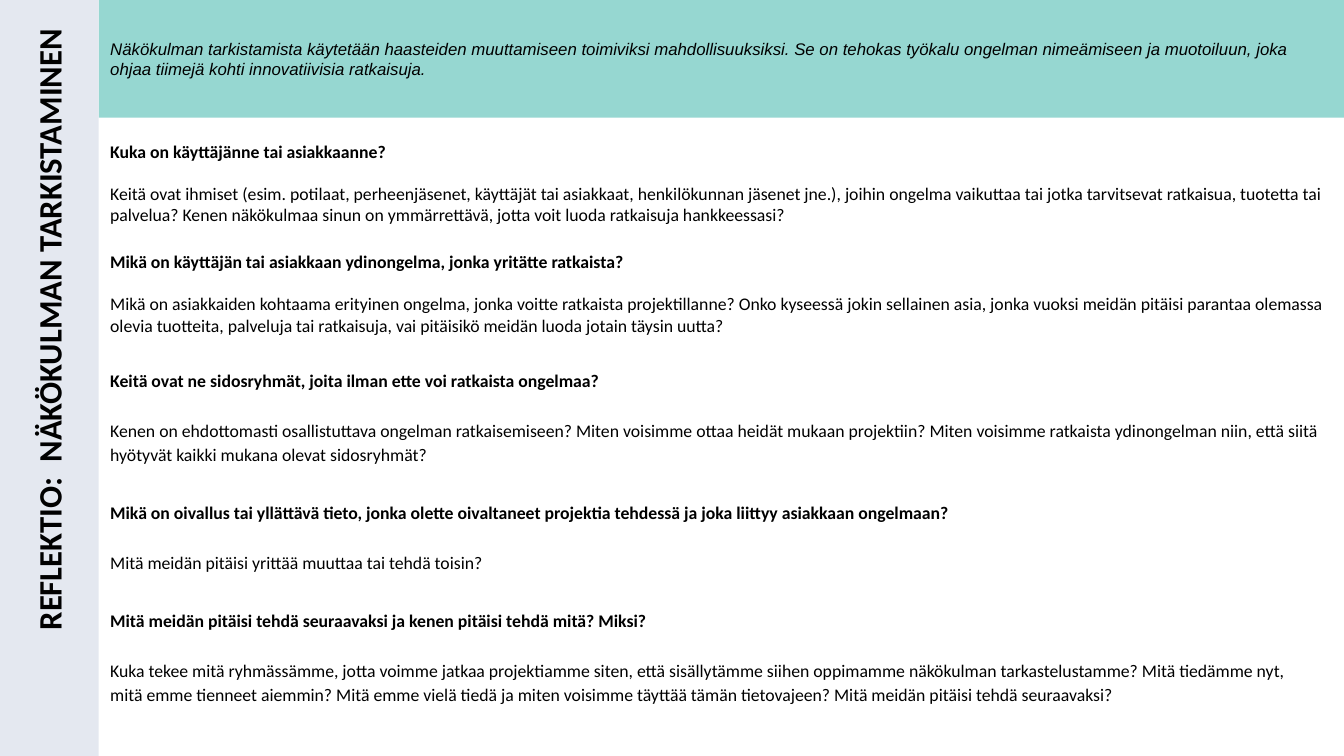
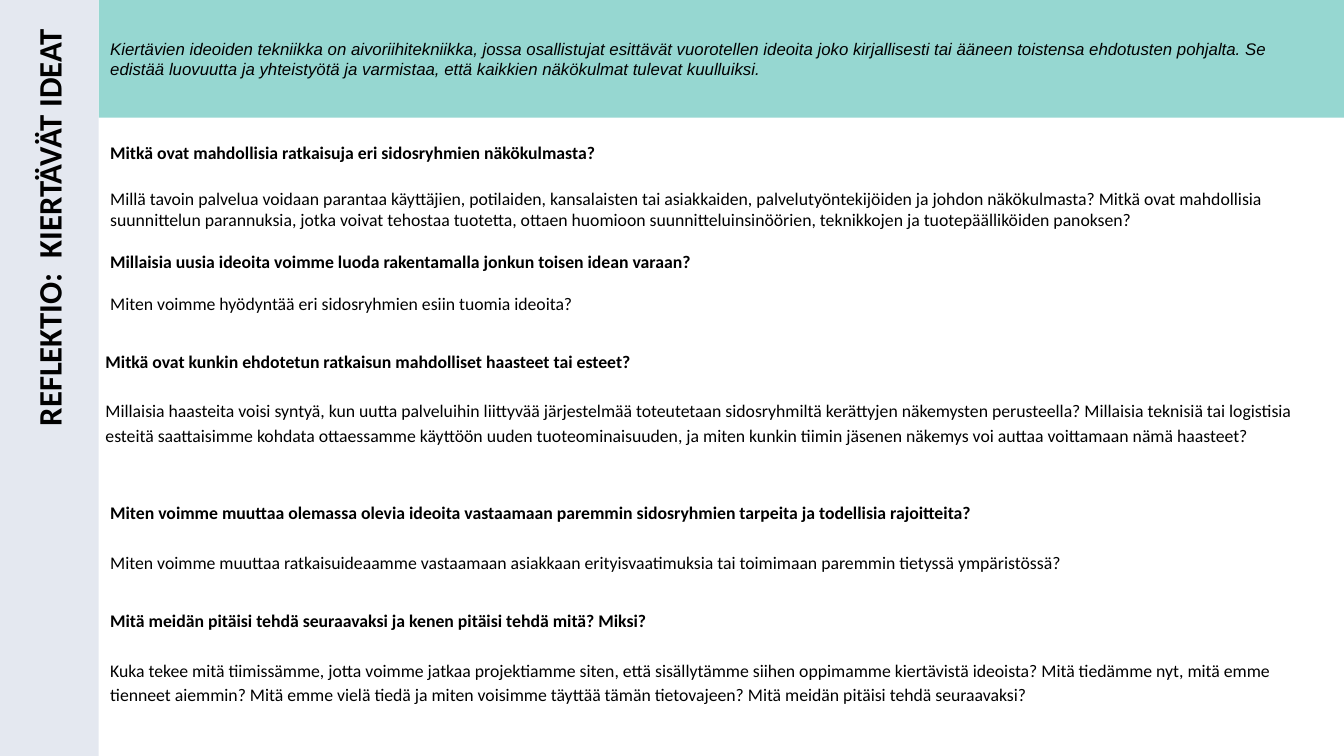
from dataclasses import dataclass

from pptx import Presentation
from pptx.dml.color import RGBColor
from pptx.enum.shapes import MSO_SHAPE
from pptx.enum.text import MSO_AUTO_SIZE, PP_ALIGN
from pptx.util import Inches, Pt

RECTANGLE = MSO_SHAPE.RECTANGLE
GROW = MSO_AUTO_SIZE.SHAPE_TO_FIT_TEXT
LEFT, RIGHT = PP_ALIGN.LEFT, PP_ALIGN.RIGHT


@dataclass(frozen=True)
class Theme:
    sidebar: RGBColor = RGBColor(0xE4, 0xE8, 0xF0)
    banner: RGBColor = RGBColor(0x96, 0xD7, 0xD1)
    ink: RGBColor = RGBColor(0, 0, 0)
    body_font: str = "Calibri"
    intro_font: str = "Arial"
    title_size: float = 35
    title_leading: float = 49
    intro_size: float = 18
    intro_leading: float = 21.6
    body_size: float = 19
    tight: float = 22.8
    loose: float = 26.6


@dataclass(frozen=True)
class Box:
    left: float
    top: float
    width: float
    height: float

    def lengths(self):
        return [Inches(n) for n in (self.left, self.top, self.width, self.height)]

    def inside(self, left, top, width, height):
        """Return a box placed from this box's top left corner."""
        return Box(self.left + left, self.top + top, width, height)


@dataclass(frozen=True)
class Question:
    """A heading and its prompt, in a box relative to the body area."""
    top: float
    height: float
    heading: str
    prompt: str
    heading_leading: float
    prompt_leading: float
    left: float = 0.17
    width: float = 18.07


THEME = Theme()
TIGHT, LOOSE = THEME.tight, THEME.loose
PAGE_WIDTH, PAGE_HEIGHT = 20, 11.25
SIDEBAR_WIDTH, BANNER_HEIGHT = 1.47, 1.75
CONTENT_WIDTH = PAGE_WIDTH - SIDEBAR_WIDTH
SIDEBAR = Box(0, 0, SIDEBAR_WIDTH, PAGE_HEIGHT)
BANNER = Box(SIDEBAR_WIDTH, 0, CONTENT_WIDTH, BANNER_HEIGHT)
BODY = Box(SIDEBAR_WIDTH, BANNER_HEIGHT, CONTENT_WIDTH, PAGE_HEIGHT - BANNER_HEIGHT)
NEXT_STEP = "Mitä meidän pitäisi tehdä seuraavaksi ja kenen pitäisi tehdä mitä? Miksi?"

VIEWPOINT = dict(
    title="REFLEKTIO:  NÄKÖKULMAN TARKISTAMINEN",
    intro="Näkökulman tarkistamista käytetään haasteiden muuttamiseen toimiviksi "
          "mahdollisuuksiksi. Se on tehokas työkalu ongelman nimeämiseen ja muotoiluun, "
          "joka ohjaa tiimejä kohti innovatiivisia ratkaisuja.",
    questions=[
        Question(0.34, 1.25, "Kuka on käyttäjänne tai asiakkaanne?",
                 "Keitä ovat ihmiset (esim. potilaat, perheenjäsenet, käyttäjät tai asiakkaat, "
                 "henkilökunnan jäsenet jne.), joihin ongelma vaikuttaa tai jotka tarvitsevat "
                 "ratkaisua, tuotetta tai palvelua? Kenen näkökulmaa sinun on ymmärrettävä, "
                 "jotta voit luoda ratkaisuja hankkeessasi?", TIGHT, TIGHT),
        Question(1.98, 1.25,
                 "Mikä on käyttäjän tai asiakkaan ydinongelma, jonka yritätte ratkaista?",
                 "Mikä on asiakkaiden kohtaama erityinen ongelma, jonka voitte ratkaista "
                 "projektillanne? Onko kyseessä jokin sellainen asia, jonka vuoksi meidän "
                 "pitäisi parantaa olemassa olevia tuotteita, palveluja tai ratkaisuja, vai "
                 "pitäisikö meidän luoda jotain täysin uutta?", TIGHT, TIGHT),
        Question(3.7, 1.45,
                 "Keitä ovat ne sidosryhmät, joita ilman ette voi ratkaista ongelmaa?",
                 "Kenen on ehdottomasti osallistuttava ongelman ratkaisemiseen? Miten voisimme "
                 "ottaa heidät mukaan projektiin? Miten voisimme ratkaista ydinongelman niin, "
                 "että siitä hyötyvät kaikki mukana olevat sidosryhmät?", LOOSE, LOOSE),
        Question(5.67, 1.08,
                 "Mikä on oivallus tai yllättävä tieto, jonka olette oivaltaneet projektia "
                 "tehdessä ja joka liittyy asiakkaan ongelmaan?",
                 "Mitä meidän pitäisi yrittää muuttaa tai tehdä toisin?", LOOSE, LOOSE),
        Question(7.27, 1.81, NEXT_STEP,
                 "Kuka tekee mitä ryhmässämme, jotta voimme jatkaa projektiamme siten, että "
                 "sisällytämme siihen oppimamme näkökulman tarkastelustamme? Mitä tiedämme nyt, "
                 "mitä emme tienneet aiemmin? Mitä emme vielä tiedä ja miten voisimme täyttää "
                 "tämän tietovajeen? Mitä meidän pitäisi tehdä seuraavaksi?",
                 LOOSE, LOOSE, width=17.73),
    ],
)

ROTATING_IDEAS = dict(
    title="REFLEKTIO:  KIERTÄVÄT IDEAT",
    intro="Kiertävien ideoiden tekniikka on aivoriihitekniikka, jossa osallistujat esittävät "
          "vuorotellen ideoita joko kirjallisesti tai ääneen toistensa ehdotusten pohjalta. "
          "Se edistää luovuutta ja yhteistyötä ja varmistaa, että kaikkien näkökulmat "
          "tulevat kuulluiksi.",
    questions=[
        Question(0.3, 1.37, "Mitkä ovat mahdollisia ratkaisuja eri sidosryhmien näkökulmasta?",
                 "Millä tavoin palvelua voidaan parantaa käyttäjien, potilaiden, kansalaisten "
                 "tai asiakkaiden, palvelutyöntekijöiden ja johdon näkökulmasta? Mitkä ovat "
                 "mahdollisia suunnittelun parannuksia, jotka voivat tehostaa tuotetta, ottaen "
                 "huomioon suunnitteluinsinöörien, teknikkojen ja tuotepäälliköiden panoksen?",
                 LOOSE, TIGHT),
        Question(1.98, 0.94,
                 "Millaisia uusia ideoita voimme luoda rakentamalla jonkun toisen idean varaan?",
                 "Miten voimme hyödyntää eri sidosryhmien esiin tuomia ideoita?", TIGHT, TIGHT),
        Question(3.41, 1.81,
                 "Mitkä ovat kunkin ehdotetun ratkaisun mahdolliset haasteet tai esteet?",
                 "Millaisia haasteita voisi syntyä, kun uutta palveluihin liittyvää järjestelmää "
                 "toteutetaan sidosryhmiltä kerättyjen näkemysten perusteella? Millaisia "
                 "teknisiä tai logistisia esteitä saattaisimme kohdata ottaessamme käyttöön "
                 "uuden tuoteominaisuuden, ja miten kunkin tiimin jäsenen näkemys voi auttaa "
                 "voittamaan nämä haasteet?", LOOSE, LOOSE, left=0.1),
        Question(5.67, 1.08,
                 "Miten voimme muuttaa olemassa olevia ideoita vastaamaan paremmin "
                 "sidosryhmien tarpeita ja todellisia rajoitteita?",
                 "Miten voimme muuttaa ratkaisuideaamme vastaamaan asiakkaan "
                 "erityisvaatimuksia tai toimimaan paremmin tietyssä ympäristössä?",
                 LOOSE, LOOSE),
        Question(7.27, 1.45, NEXT_STEP,
                 "Kuka tekee mitä tiimissämme, jotta voimme jatkaa projektiamme siten, että "
                 "sisällytämme siihen oppimamme kiertävistä ideoista? Mitä tiedämme nyt, mitä "
                 "emme tienneet aiemmin? Mitä emme vielä tiedä ja miten voisimme täyttää tämän "
                 "tietovajeen? Mitä meidän pitäisi tehdä seuraavaksi?",
                 LOOSE, LOOSE, width=17.73),
    ],
)


def add_panel(page, box, color):
    panel = page.shapes.add_shape(RECTANGLE, *box.lengths())
    panel.shadow.inherit = False
    panel.fill.solid()
    panel.fill.fore_color.rgb = color
    panel.line.fill.background()


def add_text_box(page, box):
    text_box = page.shapes.add_textbox(*box.lengths())
    frame = text_box.text_frame
    frame.word_wrap = True
    frame.auto_size = GROW
    frame.margin_left = frame.margin_right = frame.margin_top = frame.margin_bottom = 0
    return text_box


def write(para, text, *, size, leading, font=THEME.body_font, bold=False,
          italic=False, align=LEFT, before=0):
    para.alignment = align
    para.line_spacing = Pt(leading)
    para.space_before = Pt(before)
    span = para.add_run()
    span.text = text
    span.font.name = font
    span.font.size = Pt(size)
    span.font.bold = bold
    span.font.italic = italic
    span.font.color.rgb = THEME.ink


def add_sidebar(page, box, title):
    """Draw the side strip with the title reading upwards."""
    add_panel(page, box, THEME.sidebar)
    text_box = add_text_box(page, box.inside(-4.69, 5.46, 10.7, 0.65))
    text_box.rotation = 270
    write(text_box.text_frame.paragraphs[0], title, size=THEME.title_size,
          leading=THEME.title_leading, bold=True, align=RIGHT)


def add_banner(page, box, intro):
    add_panel(page, box, THEME.banner)
    text_box = add_text_box(page, box.inside(0.17, 0.58, 17.73, 0.58))
    write(text_box.text_frame.paragraphs[0], intro, size=THEME.intro_size,
          leading=THEME.intro_leading, font=THEME.intro_font, italic=True)


def add_questions(page, box, questions):
    for question in questions:
        place = box.inside(question.left, question.top, question.width, question.height)
        frame = add_text_box(page, place).text_frame
        write(frame.paragraphs[0], question.heading, size=THEME.body_size,
              leading=question.heading_leading, bold=True)
        write(frame.add_paragraph(), question.prompt, size=THEME.body_size,
              leading=question.prompt_leading, before=question.heading_leading)


def add_reflection(deck, title, intro, questions):
    page = deck.slides.add_slide(deck.slide_layouts[6])
    add_sidebar(page, SIDEBAR, title)
    add_banner(page, BANNER, intro)
    add_questions(page, BODY, questions)


def main():
    deck = Presentation()
    deck.slide_width = Inches(PAGE_WIDTH)
    deck.slide_height = Inches(PAGE_HEIGHT)
    for content in (VIEWPOINT, ROTATING_IDEAS):
        add_reflection(deck, **content)
    deck.save("out.pptx")


if __name__ == "__main__":
    main()
